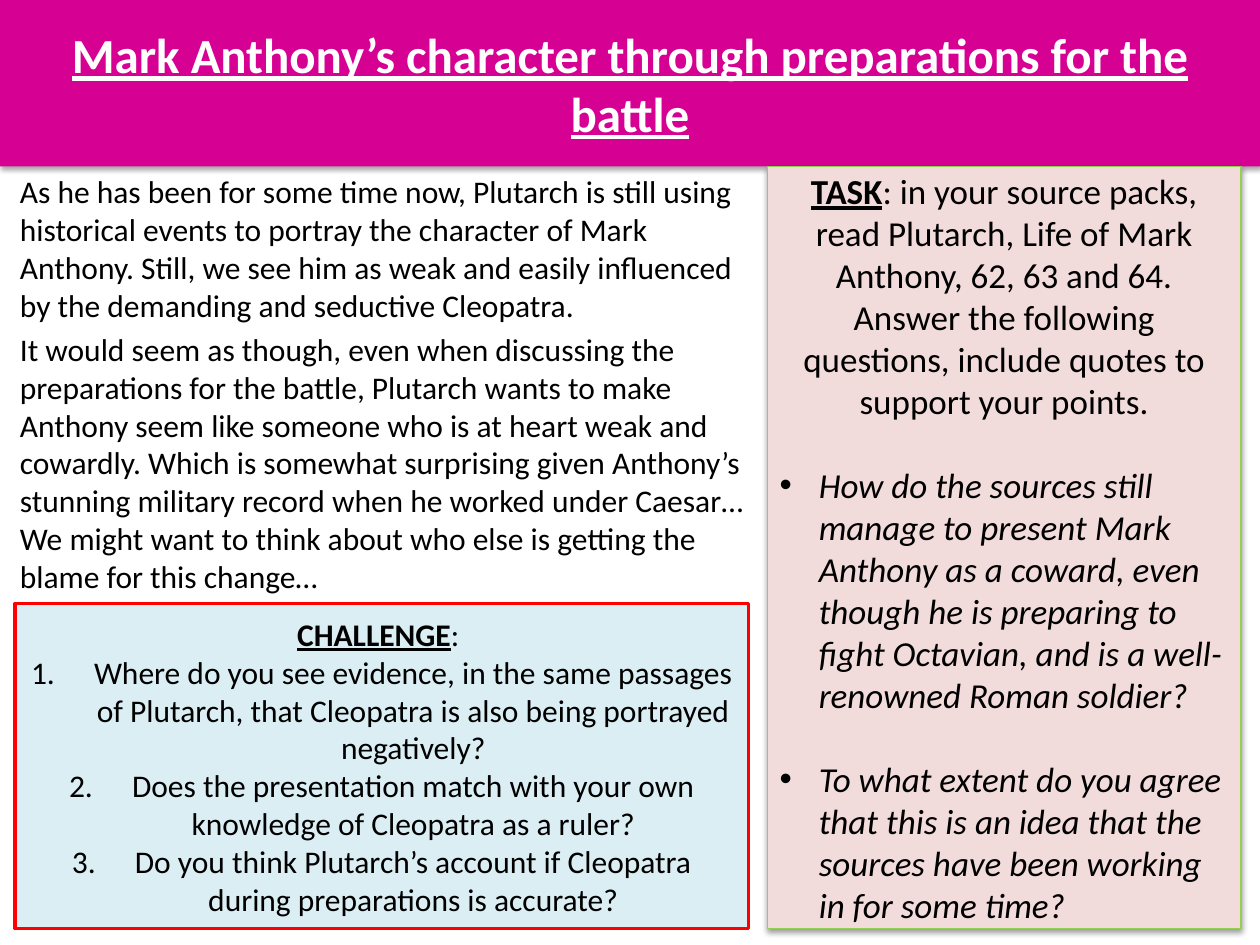
import pptx
import pptx.dml.color
import pptx.enum.shapes
import pptx.enum.text
import pptx.oxml.ns
import pptx.util
from lxml import etree
from pptx.util import Inches

ALIGN = pptx.enum.text.PP_ALIGN
ANCHOR = pptx.enum.text.MSO_ANCHOR
SPLIT = 1.32  # bottom of the title band, top of the columns


def color(hex_value):
    return pptx.dml.color.RGBColor.from_string(hex_value)


def add_child(parent, tag, **attributes):
    child = etree.SubElement(parent, pptx.oxml.ns.qn(tag))
    for name, value in attributes.items():
        child.set(name, str(value))
    return child


def add_shadow(shape, alpha, blur, distance):
    """Add a black shadow falling straight down."""
    effects = shape._element.spPr.find(pptx.oxml.ns.qn("a:effectLst"))
    shadow = add_child(effects, "a:outerShdw", blurRad=pptx.util.Pt(blur),
                       dist=pptx.util.Pt(distance), dir=90 * 60000, rotWithShape=0)
    black = add_child(shadow, "a:srgbClr", val="000000")
    add_child(black, "a:alpha", val=alpha * 1000)


def add_panel(slide, box, fill, line=None, line_width=1):
    shape = slide.shapes.add_shape(pptx.enum.shapes.MSO_SHAPE.RECTANGLE,
                                   *map(Inches, box))
    shape.shadow.inherit = False
    shape.fill.solid()
    shape.fill.fore_color.rgb = color(fill)
    if line:
        shape.line.color.rgb = color(line)
        shape.line.width = pptx.util.Pt(line_width)
    else:
        shape.line.fill.background()
    return shape


def write(shape, text, heading="", size=18, hex_value="000000", align=ALIGN.LEFT,
          italic=False, before=0, bullet=None, number=False, indent=0,
          anchor=ANCHOR.MIDDLE):
    """Append a paragraph, with an optional bold underlined heading."""
    frame = shape.text_frame
    frame.word_wrap = True
    frame.vertical_anchor = anchor
    paragraph = frame.paragraphs[0]
    if paragraph.runs:
        paragraph = frame.add_paragraph()
    paragraph.alignment = align
    paragraph.space_before = pptx.util.Pt(before)
    if indent:
        properties = paragraph._p.get_or_add_pPr()
        properties.set("marL", str(Inches(indent)))
        properties.set("indent", str(-Inches(indent)))
        if number:
            add_child(properties, "a:buFont", typeface="+mj-lt")
            add_child(properties, "a:buAutoNum", type="arabicPeriod")
        elif bullet:
            add_child(properties, "a:buFont", typeface="Arial")
            add_child(properties, "a:buChar", char=bullet)
    for part, strong in ((heading, True), (text, False)):
        if part:
            run = paragraph.add_run()
            run.text = part
            run.font.name = "Calibri"
            run.font.size = pptx.util.Pt(size)
            run.font.color.rgb = color(hex_value)
            run.font.bold = run.font.underline = strong
            run.font.italic = italic


def add_title(slide, box):
    band = add_panel(slide, box, "D60093")
    add_shadow(band, 35, 3.1, 1.8)
    write(band, "", heading="Mark Anthony’s character through preparations for the battle",
          size=28, hex_value="FFFFFF", align=ALIGN.CENTER)


def add_introduction(slide, box):
    text_box = slide.shapes.add_textbox(*map(Inches, box))
    write(text_box, "As he has been for some time now, Plutarch is still using historical "
          "events to portray the character of Mark Anthony. Still, we see him as weak and "
          "easily influenced by the demanding and seductive Cleopatra.", anchor=ANCHOR.TOP)
    write(text_box, "It would seem as though, even when discussing the preparations for the "
          "battle, Plutarch wants to make Anthony seem like someone who is at heart weak and "
          "cowardly. Which is somewhat surprising given Anthony’s stunning military record "
          "when he worked under Caesar… We might want to think about who else is getting the "
          "blame for this change…", before=3.6, anchor=ANCHOR.TOP)


def add_challenge(slide, box):
    panel = add_panel(slide, box, "DBEEF4", "FF0000", 2)
    write(panel, ": ", heading="CHALLENGE", align=ALIGN.CENTER)
    for question in (
        "Where do you see evidence, in the same passages of Plutarch, that Cleopatra is "
        "also being portrayed negatively?",
        "Does the presentation match with your own knowledge of Cleopatra as a ruler?",
        "Do you think Plutarch’s account if Cleopatra during preparations is accurate?",
    ):
        write(panel, question, align=ALIGN.CENTER, number=True, indent=0.5)


def add_task(slide, box):
    panel = add_panel(slide, box, "F2DCDB", "92D050", 0.75)
    add_shadow(panel, 38, 3.1, 1.6)
    write(panel, ": in your source packs, read Plutarch, Life of Mark Anthony, 62, 63 and 64.",
          heading="TASK", size=20, align=ALIGN.CENTER)
    write(panel, "Answer the following questions, include quotes to support your points.",
          size=20, align=ALIGN.CENTER)
    for question in (
        "How do the sources still manage to present Mark Anthony as a coward, even though he "
        "is preparing to fight Octavian, and is a well-renowned Roman soldier?",
        "To what extent do you agree that this is an idea that the sources have been working "
        "in for some time?",
    ):
        write(panel, question, size=20, italic=True, before=24, bullet="•", indent=0.31)


def main():
    presentation = pptx.Presentation()
    presentation.slide_width = Inches(10)
    presentation.slide_height = Inches(7.5)
    slide = presentation.slides.add_slide(presentation.slide_layouts[6])

    # Title band across the top
    add_title(slide, (0, 0, 10, SPLIT))
    # Left column: introduction above the challenge
    add_introduction(slide, (0.06, SPLIT, 5.97, 4.76))
    add_challenge(slide, (0.12, 4.79, 5.82, 2.58))
    # Right column: task
    add_task(slide, (6.09, SPLIT, 3.76, 6.05))

    presentation.save("out.pptx")


if __name__ == "__main__":
    main()
